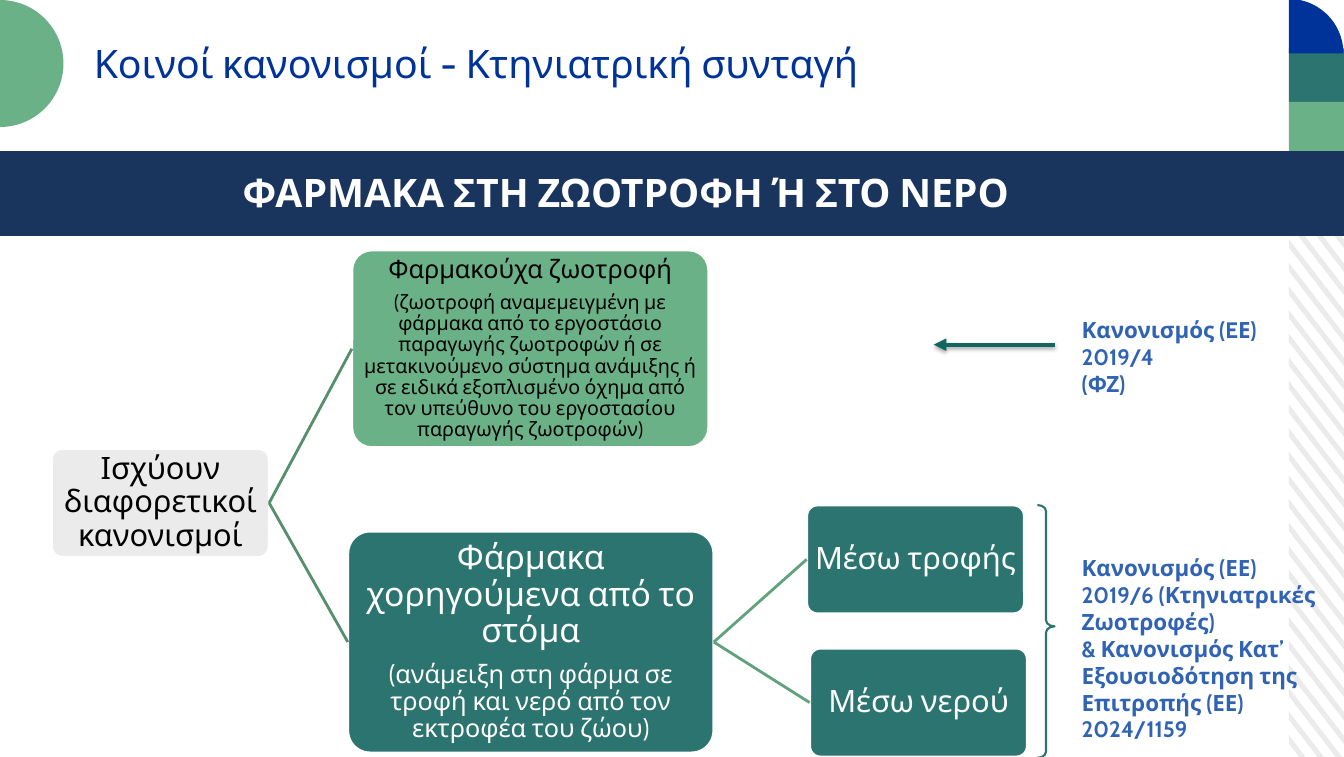
import math

import pptx
import pptx.util
import pptx.dml.color
import pptx.enum.shapes
import pptx.enum.text
import pptx.oxml
import pptx.oxml.ns

RGBColor = pptx.dml.color.RGBColor
Shapes = pptx.enum.shapes.MSO_SHAPE
Align = pptx.enum.text.PP_ALIGN
Anchor = pptx.enum.text.MSO_ANCHOR

WIDTH = pptx.util.Inches(13.33)
HEIGHT = pptx.util.Inches(7.51)
COLUMN = WIDTH / 100
ROW = HEIGHT / 100
FONT = "Cabin"

WHITE = RGBColor(0xFF, 0xFF, 0xFF)
BLACK = RGBColor(0, 0, 0)
GREY = RGBColor(0xEC, 0xEB, 0xEB)
GREEN = RGBColor(0x6B, 0xB1, 0x88)
TEAL = RGBColor(0x2C, 0x74, 0x70)
BLUE = RGBColor(0x00, 0x33, 0x99)
NAVY = RGBColor(0x19, 0x35, 0x5D)
REFERENCE_BLUE = RGBColor(0x31, 0x63, 0xB5)
ARROW_TEAL = RGBColor(0x12, 0x66, 0x60)
FIRST_LINK = RGBColor(0x56, 0x8F, 0x6E)
SECOND_LINK = RGBColor(0x61, 0xA2, 0x7C)

SIDE_LEFT = 95.9
BANNER_TOP, BANNER_HEIGHT = 19.97, 11.19
NODE_WIDTH, NODE_HEIGHT = 16.2, 14.38


def grid(left, top, width, height):
    """Turn grid columns and rows into slide lengths."""
    return [round(length) for length in
            (left * COLUMN, top * ROW, width * COLUMN, height * ROW)]


def write_text(frame, text, size, color, bold=False, align=Align.LEFT,
               line_spacing=None, space_after=None):
    paragraph = frame.add_paragraph() if frame.text else frame.paragraphs[0]
    paragraph.text = text
    paragraph.alignment = align
    paragraph.line_spacing = line_spacing
    paragraph.space_after = space_after
    font = paragraph.runs[0].font
    font.name, font.size, font.bold = FONT, pptx.util.Pt(size), bold
    font.color.rgb = color


def paint(shape, fill=None, line=None, line_width=2):
    shape.shadow.inherit = False
    if fill is None:
        shape.fill.background()
    else:
        shape.fill.solid()
        shape.fill.fore_color.rgb = fill
    if line is None:
        shape.line.fill.background()
    else:
        shape.line.color.rgb = line
        shape.line.width = pptx.util.Pt(line_width)


def add_block(slide, box, preset, **colors):
    shape = slide.shapes.add_shape(preset, *grid(*box))
    paint(shape, **colors)
    return shape


def add_sector(slide, center_x, center_y, radius, start, end, color):
    """Draw a disc sector; angles run clockwise from the right, in degrees."""
    steps = 48
    angles = [math.radians(start + (end - start) * step / steps)
              for step in range(steps + 1)]
    builder = slide.shapes.build_freeform(round(center_x), round(center_y))
    builder.add_line_segments([(round(center_x + radius * math.cos(angle)),
                                round(center_y + radius * math.sin(angle)))
                               for angle in angles])
    paint(builder.convert_to_shape(), fill=color)


def add_stripes(slide):
    """Draw the slanted stripes, cut off at the top and bottom of their strip."""
    left, right = SIDE_LEFT * COLUMN, WIDTH
    top, bottom = 20.5 * ROW, HEIGHT
    drop, thickness, period = 9.43 * ROW, 1.1 * ROW, 3.12 * ROW
    slope = drop / (right - left)

    def edge(start):
        heights = [min(max(y, top), bottom) for y in (start, start + drop)]
        return [(round(left + (y - start) / slope), round(y)) for y in heights]

    builder = None
    for index in range(-3, 25):
        start = 22.24 * ROW + index * period
        corners = edge(start) + edge(start + thickness)[::-1]
        if builder is None:
            builder = slide.shapes.build_freeform(*corners[0])
        else:
            builder.move_to(*corners[0])
        builder.add_line_segments(corners[1:])
    paint(builder.convert_to_shape(), fill=GREY)


def add_decoration(slide):
    add_stripes(slide)
    for top, color in ((6.4, TEAL), (13.45, GREEN)):
        add_block(slide, (SIDE_LEFT, top, 100 - SIDE_LEFT, 7.06),
                  Shapes.RECTANGLE, fill=color)
    add_sector(slide, SIDE_LEFT * COLUMN, 7.06 * ROW, 7.2 * ROW, -90, 0, BLUE)
    add_sector(slide, 0, 8.39 * ROW, 8.39 * ROW, -90, 90, GREEN)


def add_title(slide, text):
    title = slide.shapes.title
    title.left, title.top, title.width, title.height = grid(6.23, 4.53, 65.7, 7.72)
    frame = title.text_frame
    frame.auto_size = pptx.enum.text.MSO_AUTO_SIZE.NONE
    frame.vertical_anchor = Anchor.TOP
    write_text(frame, text, size=28, color=BLUE)


def add_text_box(slide, box, lines, **text_format):
    frame = slide.shapes.add_textbox(*grid(*box)).text_frame
    frame.word_wrap = True
    for line in lines:
        write_text(frame, line, **text_format)


def add_node(slide, box, fill, color, lines):
    """Add a rounded diagram box holding (text, size) lines."""
    node = add_block(slide, box, Shapes.ROUNDED_RECTANGLE, fill=fill, line=WHITE)
    node.adjustments[0] = 0.1
    frame = node.text_frame
    frame.word_wrap = True
    frame.vertical_anchor = Anchor.MIDDLE
    frame.margin_left = frame.margin_right = pptx.util.Inches(0.02)
    frame.margin_top = frame.margin_bottom = pptx.util.Inches(0.02)
    for text, size in lines:
        write_text(frame, text, size, color, align=Align.CENTER,
                   line_spacing=0.9, space_after=pptx.util.Pt(size * 0.35))
    return node


def add_line(slide, color, width, ends=(0, 0, 0, 0)):
    line = slide.shapes.add_connector(
        pptx.enum.shapes.MSO_CONNECTOR.STRAIGHT, *grid(*ends))
    line.line.color.rgb = color
    line.line.width = pptx.util.Pt(width)
    effects = pptx.oxml.parse_xml(
        f"<a:effectLst {pptx.oxml.ns.nsdecls('a')}/>")
    line._element.spPr.append(effects)
    return line, effects


def add_link(slide, parent, child, color):
    link, _ = add_line(slide, color, 2)
    link.begin_connect(parent, 3)
    link.end_connect(child, 1)


def add_arrow(slide, ends):
    arrow, effects = add_line(slide, ARROW_TEAL, 3, ends)
    namespace = pptx.oxml.ns.nsdecls("a")
    arrow.line._get_or_add_ln().append(pptx.oxml.parse_xml(
        f'<a:tailEnd {namespace} type="triangle"/>'))
    effects.append(pptx.oxml.parse_xml(
        f'<a:outerShdw {namespace} blurRad="39370" dist="22860" dir="5400000" '
        'rotWithShape="0"><a:srgbClr val="000000"><a:alpha val="35000"/>'
        '</a:srgbClr></a:outerShdw>'))


def add_diagram(slide):
    root = add_node(slide, (3.83, 59.25, NODE_WIDTH, NODE_HEIGHT), GREY, BLACK,
                    [("Ισχύουν διαφορετικοί κανονισμοί", 22)])
    feed = add_node(slide, (26.18, 33.02, 26.55, 26.1), GREEN, BLACK, [
        ("Φαρμακούχα ζωοτροφή", 18),
        ("(ζωοτροφή αναμεμειγμένη με φάρμακα από το εργοστάσιο παραγωγής "
         "ζωοτροφών ή σε μετακινούμενο σύστημα ανάμιξης ή σε ειδικά "
         "εξοπλισμένο όχημα από τον υπεύθυνο του εργοστασίου παραγωγής "
         "ζωοτροφών)", 14)])
    oral = add_node(slide, (25.88, 70.17, 27.23, 29.29), TEAL, WHITE, [
        ("Φάρμακα χορηγούμενα από το στόμα", 24),
        ("(ανάμειξη στη φάρμα σε τροφή και νερό από τον εκτροφέα του ζώου)", 18)])
    for child in (feed, oral):
        add_link(slide, root, child, FIRST_LINK)
    for left, top, text in ((60.02, 66.71, "Μέσω τροφής"),
                            (60.24, 85.62, "Μέσω νερού")):
        route = add_node(slide, (left, top, NODE_WIDTH, NODE_HEIGHT),
                         TEAL, WHITE, [(text, 22)])
        add_link(slide, oral, route, SECOND_LINK)


def add_references(slide):
    reference = dict(size=16, color=REFERENCE_BLUE, bold=True)
    add_text_box(slide, (79.74, 41.15, 17.18, 12.12),
                 ["Κανονισμός (EΕ) 2019/4", "(ΦΖ)"], **reference)
    add_text_box(slide, (79.74, 72.57, 19.65, 22.9),
                 ["Κανονισμός (ΕΕ) 2019/6 (Κτηνιατρικές Ζωοτροφές)",
                  "& Κανονισμός Κατ’ Εξουσιοδότηση της Επιτροπής (ΕΕ) 2024/1159"],
                 **reference)
    add_arrow(slide, (78.47, 45.54, 69.47, 45.54))
    brace = add_block(slide, (77.19, 66.71, 1.28, 33.4), Shapes.RIGHT_BRACE,
                      line=TEAL, line_width=1.5)
    brace.adjustments[0], brace.adjustments[1] = 0.36, 0.48


def main():
    presentation = pptx.Presentation()
    presentation.slide_width, presentation.slide_height = WIDTH, HEIGHT
    slide = presentation.slides.add_slide(presentation.slide_layouts[5])
    add_decoration(slide)
    add_block(slide, (0, BANNER_TOP, 100, BANNER_HEIGHT), Shapes.RECTANGLE, fill=NAVY)
    add_text_box(slide, (15.3, 21.57, 62.5, 8.66),
                 ["ΦΑΡΜΑΚΑ ΣΤΗ ΖΩΟΤΡΟΦΗ Ή ΣΤΟ ΝΕΡΟ"],
                 size=28, color=WHITE, bold=True, align=Align.CENTER)
    add_title(slide, "Κοινοί κανονισμοί - Κτηνιατρική συνταγή")
    add_diagram(slide)
    add_references(slide)
    presentation.save("out.pptx")


if __name__ == "__main__":
    main()
